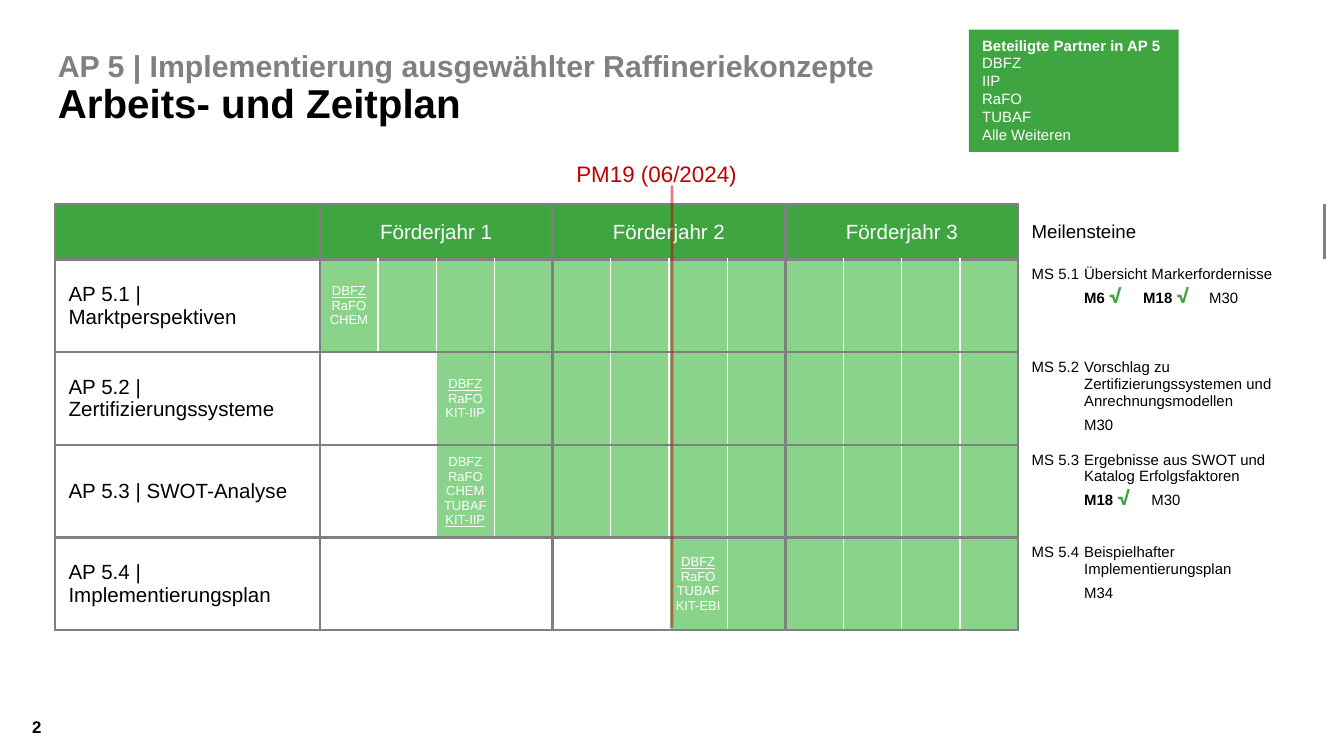
from copy import deepcopy

from lxml import etree
from pptx import Presentation
from pptx import util as u
from pptx.dml import color as dml
from pptx.enum import shapes, text
from pptx.oxml import ns

COLORS = {"green": "3EA540", "light": "89D38B", "gray": "808080",
          "white": "FFFFFF", "black": "000000", "red": "C00000"}
PLAIN_TABLE = "{2D5ABB26-0587-4C30-8999-92F81FD0307C}"
YEAR_QUARTERS, YEARS = 4, 3
QUARTERS = YEAR_QUARTERS * YEARS
MILESTONE_COL = QUARTERS + 1
TICK = ("√", {"name": "Roboto", "size": u.Pt(12), "color": "green", "bold": True})
BOLD = {"bold": True}

PACKAGES = [
    {"label": "AP 5.1 | Marktperspektiven", "start": 1, "lead": "DBFZ",
     "partners": ["DBFZ", "RaFO", "CHEM"],
     "milestone": "MS 5.1\tÜbersicht Markerfordernisse", "tabs": [0.39, 0.83, 1.32],
     "due": [("\tM6 ", BOLD), TICK, ("\tM18 ", BOLD), TICK, ("\tM30", {})]},
    {"label": "AP 5.2 | Zertifizierungssysteme", "start": 3, "lead": "DBFZ",
     "partners": ["DBFZ", "RaFO", "KIT-IIP"],
     "milestone": "MS 5.2\tVorschlag zu Zertifizierungssystemen und Anrechnungsmodellen",
     "tabs": [0.39], "due": [("\tM30", {})]},
    {"label": "AP 5.3 | SWOT-Analyse", "start": 3, "lead": "KIT-IIP",
     "partners": ["DBFZ", "RaFO", "CHEM", "TUBAF", "KIT-IIP"],
     "milestone": "MS 5.3\tErgebnisse aus SWOT und Katalog Erfolgsfaktoren",
     "tabs": [0.39, 0.89], "due": [("\tM18 ", BOLD), TICK, ("\tM30", {})]},
    {"label": "AP 5.4 | Implementierungsplan", "start": 7, "lead": "DBFZ",
     "partners": ["DBFZ", "RaFO", "TUBAF", "KIT-EBI"],
     "milestone": "MS 5.4\tBeispielhafter Implementierungsplan",
     "tabs": [0.39], "due": [("\tM34", {})]},
]


def rgb(name):
    """Return the named palette colour."""
    return dml.RGBColor.from_string(COLORS[name])


def apply(target, values):
    """Set every attribute of a format dict on the target."""
    for attribute, value in values.items():
        setattr(target, attribute, value)


def write(frame, lines, size, color="black", align=text.PP_ALIGN.LEFT):
    """Fill a frame with a paragraph per list of runs; a final newline breaks the line."""
    for index, runs in enumerate(lines):
        paragraph = frame.paragraphs[0] if index == 0 else frame.add_paragraph()
        paragraph.alignment = align
        for words, changes in runs:
            run = paragraph.add_run()
            run.text = words.rstrip("\n")
            values = {"name": "Arial", "size": u.Pt(size), "color": color, **changes}
            run.font.color.rgb = rgb(values.pop("color"))
            apply(run.font, values)
            if words.endswith("\n"):
                paragraph.add_line_break()
                paragraph._p[-1].append(deepcopy(run._r.rPr))
    return frame.paragraphs


def format_frame(frame, inset=None, anchor=text.MSO_ANCHOR.TOP):
    """Set wrapping, anchor and an optional uniform inset of a text frame."""
    values = {"word_wrap": True, "auto_size": text.MSO_AUTO_SIZE.NONE,
              "vertical_anchor": anchor}
    if inset is not None:
        sides = ("left", "top", "right", "bottom")
        values.update({f"margin_{side}": u.Inches(inset) for side in sides})
    apply(frame, values)


def add_title(slide, box):
    """Place the two-line heading in the title placeholder."""
    title = slide.shapes.title
    apply(title, dict(zip(("left", "top", "width", "height"), map(u.Inches, box))))
    format_frame(title.text_frame, 0, text.MSO_ANCHOR.BOTTOM)
    heading = [("AP 5 | Implementierung ausgewählter Raffineriekonzepte\n",
                {"bold": True, "color": "gray"}),
               ("Arbeits- und Zeitplan", {"bold": True, "size": u.Pt(21.6)})]
    paragraph = write(title.text_frame, [heading], 16.2)[0]
    apply(paragraph, {"line_spacing": 0.9, "space_before": u.Pt(0)})


def add_label(slide, box, words, size, color="black", bold=False, **frame_format):
    """Place a single line of text in its own box."""
    label = slide.shapes.add_textbox(*map(u.Inches, box))
    format_frame(label.text_frame, **frame_format)
    write(label.text_frame, [[(words, {"bold": bold})]], size, color)


def add_partners(slide, box):
    """Place the green box that lists the partners."""
    partners = slide.shapes.add_shape(shapes.MSO_SHAPE.RECTANGLE, *map(u.Inches, box))
    partners.shadow.inherit = False
    partners.fill.solid()
    partners.fill.fore_color.rgb = rgb("green")
    partners.line.fill.background()
    format_frame(partners.text_frame)
    names = ["DBFZ", "IIP", "RaFO", "TUBAF", "Alle Weiteren"]
    lines = [[("Beteiligte Partner in AP 5", BOLD)]] + [[(name, {})] for name in names]
    write(partners.text_frame, lines, 8, "white")


def set_borders(cell, row, col):
    """Draw gray year and row borders and thin white quarter borders."""
    framed = row == 0 or col == 0
    year_start = framed or col % YEAR_QUARTERS == 1
    year_end = framed or col % YEAR_QUARTERS == 0
    edges = {"L": year_start, "R": year_end, "T": True, "B": True}
    if col == MILESTONE_COL:
        edges = {"L": True}
    properties = cell._tc.get_or_add_tcPr()
    for side, is_gray in edges.items():
        line = etree.SubElement(properties, ns.qn(f"a:ln{side}"),
                                w=str(u.Pt(1.5 if is_gray else 0.75)))
        fill = etree.SubElement(line, ns.qn("a:solidFill"))
        etree.SubElement(fill, ns.qn("a:srgbClr"),
                         val=COLORS["gray" if is_gray else "white"])


def fill_cell(cell, color):
    """Fill a cell with a palette colour or leave it clear."""
    if color:
        cell.fill.solid()
        cell.fill.fore_color.rgb = rgb(color)
    else:
        cell.fill.background()


def write_milestone(cell, package):
    """Write a milestone with a hanging title and tabbed due months."""
    title, due = write(cell.text_frame, [[(package["milestone"], {})], package["due"]], 8)
    hang = u.Inches(0.39)
    properties = title._p.get_or_add_pPr()
    properties.set("marL", str(hang))
    properties.set("indent", str(-hang))
    if TICK not in package["due"]:
        due.space_before = u.Pt(4)
    stops = etree.SubElement(due._p.get_or_add_pPr(), ns.qn("a:tabLst"))
    for stop in package["tabs"]:
        etree.SubElement(stops, ns.qn("a:tab"), pos=str(u.Inches(stop)), algn="l")


def write_package(plan, row, package):
    """Write the label, partners and milestone of one work package."""
    write(plan.cell(row, 0).text_frame, [[(package["label"], {})]], 11)
    team = plan.cell(row, package["start"])
    apply(team, {"margin_left": 0, "margin_right": 0})
    lines = [[(name, {"underline": name == package["lead"]})]
             for name in package["partners"]]
    write(team.text_frame, lines, 7, "white", text.PP_ALIGN.CENTER)
    milestone = plan.cell(row, MILESTONE_COL)
    milestone.vertical_anchor = text.MSO_ANCHOR.TOP
    write_milestone(milestone, package)


def add_schedule(slide, box):
    """Place the work plan table with years, quarters and milestones."""
    label_width, milestone_width, header_height = 1.97, 2.28, 0.41
    plan = slide.shapes.add_table(len(PACKAGES) + 1, QUARTERS + 2,
                                  *map(u.Inches, box)).table
    apply(plan, {"first_row": False, "horz_banding": False})
    plan._tbl.tblPr.find(ns.qn("a:tableStyleId")).text = PLAIN_TABLE
    quarter_width = (box[2] - label_width - milestone_width) / QUARTERS
    widths = [label_width] + [quarter_width] * QUARTERS + [milestone_width]
    for column, width in zip(plan.columns, widths):
        column.width = u.Inches(width)
    row_height = (box[3] - header_height) / len(PACKAGES)
    for row, line in enumerate(plan.rows):
        line.height = u.Inches(row_height if row else header_height)
        for col, cell in enumerate(line.cells):
            cell.vertical_anchor = text.MSO_ANCHOR.MIDDLE
            set_borders(cell, row, col)
            active = row and PACKAGES[row - 1]["start"] <= col
            color = "light" if active else None if row else "green"
            fill_cell(cell, color if col < MILESTONE_COL else None)
    for year in range(YEARS):
        first = 1 + year * YEAR_QUARTERS
        header = plan.cell(0, first)
        header.merge(plan.cell(0, first + YEAR_QUARTERS - 1))
        write(header.text_frame, [[(f"Förderjahr {year + 1}", {})]], 11, "white",
              text.PP_ALIGN.CENTER)
    write(plan.cell(0, MILESTONE_COL).text_frame, [[("Meilensteine", {})]], 10)
    for row, package in enumerate(PACKAGES, 1):
        write_package(plan, row, package)


def add_today_line(slide, x, bottom, top):
    """Draw the translucent red line at the current project month."""
    today = slide.shapes.add_connector(shapes.MSO_CONNECTOR.STRAIGHT,
                                       *map(u.Inches, (x, bottom, x, top)))
    today.line.width = u.Pt(1.5)
    today.line.color.rgb = rgb("red")
    tint = today.line._ln.find(".//" + ns.qn("a:srgbClr"))
    etree.SubElement(tint, ns.qn("a:alpha"), val="50000")
    etree.SubElement(today._element.spPr, ns.qn("a:effectLst"))


def main():
    """Build and save the work plan slide."""
    deck = Presentation()
    apply(deck, {"slide_width": u.Inches(10), "slide_height": u.Inches(10 * 9 / 16)})
    slide = deck.slides.add_slide(deck.slide_layouts[5])
    add_label(slide, (0.24, 5.19, 0.36, 0.43), "2", 9, bold=True, inset=0,
              anchor=text.MSO_ANCHOR.MIDDLE)
    add_title(slide, (0.43, 0.32, 7.51, 0.63))
    add_label(slide, (4.19, 1.14, 1.66, 0.3), "PM19 (06/2024)", 12, "red")
    add_schedule(slide, (0.41, 1.52, 9.45, 3.17))
    add_today_line(slide, 5, 4.67, 1.38)
    add_partners(slide, (7.21, 0.22, 1.56, 0.91))
    deck.save("out.pptx")


if __name__ == "__main__":
    main()
